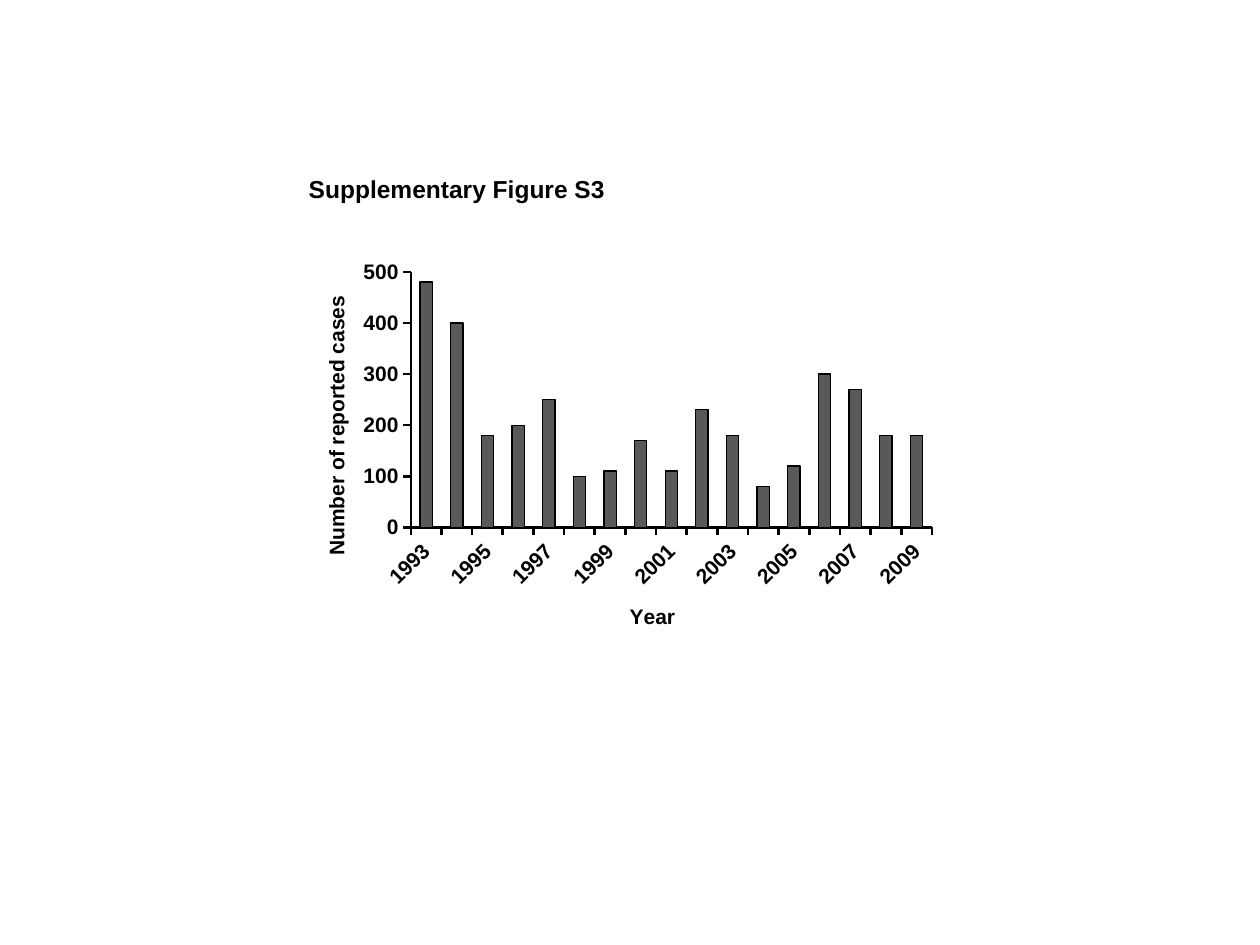
from lxml import etree
from pptx import Presentation
from pptx import util as u
from pptx.chart import data
from pptx.dml.color import RGBColor
from pptx.enum import chart as ch
from pptx.enum import text
from pptx.oxml.ns import qn

BLACK = RGBColor(0, 0, 0)
BAR_GRAY = RGBColor(0x59, 0x59, 0x59)
YEARS = range(1993, 2010)
CASES = (480, 400, 180, 200, 250, 100, 110, 170, 110,
         230, 180, 80, 120, 300, 270, 180, 180)


def style_font(font, size):
    """Apply the bold black Arial used throughout the slide."""
    font.name, font.size, font.bold = "Arial", u.Pt(size), True
    font.color.rgb = BLACK


def style_line(line, width):
    """Give a line a solid black stroke."""
    line.color.rgb = BLACK
    line.width = u.Pt(width)


def set_layout(parent, index, **settings):
    """Place a chart part at fractions of the chart area."""
    for old in parent.findall(qn("c:layout")):
        parent.remove(old)
    layout = etree.Element(qn("c:layout"))
    manual = etree.SubElement(layout, qn("c:manualLayout"))
    for tag, value in settings.items():
        etree.SubElement(manual, qn(f"c:{tag}")).set("val", str(value))
    parent.insert(index, layout)


def style_axis(axis, title, x, y):
    """Format an axis and place its title."""
    axis.has_major_gridlines = False
    axis.major_tick_mark = ch.XL_TICK_MARK.OUTSIDE
    axis.minor_tick_mark = ch.XL_TICK_MARK.NONE
    style_line(axis.format.line, 1.5)
    style_font(axis.tick_labels.font, 12)
    caption = axis.axis_title.text_frame
    caption.text = title
    style_font(caption.paragraphs[0].font, 12)
    set_layout(axis.axis_title._element, 1, xMode="edge", yMode="edge", x=x, y=y)


def slant_alternate_years(axis):
    """Label every second year at 45 degrees, with a tick for each year."""
    element = axis._element
    element.find(qn("c:txPr")).find(qn("a:bodyPr")).set("rot", "-2700000")
    last = element.find(qn("c:noMultiLvlLbl"))
    for tag, step in (("tickLblSkip", "2"), ("tickMarkSkip", "1")):
        skip = etree.Element(qn(f"c:{tag}"))
        skip.set("val", step)
        last.addprevious(skip)


def add_heading(slide):
    """Fill and place the figure heading."""
    heading = slide.shapes.title
    heading.left, heading.top = u.Cm(5.97), u.Cm(3.38)
    heading.width, heading.height = u.Cm(6.5), u.Cm(0.86)
    frame = heading.text_frame
    frame.text = "Supplementary Figure S3"
    frame.word_wrap = False
    frame.auto_size = text.MSO_AUTO_SIZE.SHAPE_TO_FIT_TEXT
    frame.vertical_anchor = text.MSO_ANCHOR.TOP
    frame.paragraphs[0].alignment = text.PP_ALIGN.LEFT
    style_font(frame.paragraphs[0].font, 14)


def add_cases_chart(slide):
    """Add the column chart of reported cases by year."""
    cases = data.CategoryChartData()
    cases.categories = [str(year) for year in YEARS]
    cases.add_series("Series 1", CASES)
    chart = slide.shapes.add_chart(
        ch.XL_CHART_TYPE.COLUMN_CLUSTERED,
        u.Cm(5.92), u.Cm(5.08), u.Cm(13.13), u.Cm(8.05), cases).chart
    chart.has_legend = chart.has_title = False
    style_font(chart.font, 12)
    plot = chart.plots[0]
    plot.gap_width, plot.vary_by_categories = 150, False
    bars = plot.series[0].format
    bars.fill.solid()
    bars.fill.fore_color.rgb = BAR_GRAY
    style_line(bars.line, 0.75)
    style_axis(chart.category_axis, "Year", 0.51, 0.87)
    slant_alternate_years(chart.category_axis)
    counts = chart.value_axis
    style_axis(counts, "Number of reported cases", 0.04, 0.1)
    counts.minimum_scale, counts.maximum_scale, counts.major_unit = 0, 500, 100
    set_layout(chart._chartSpace.chart.plotArea, 0, layoutTarget="inner",
               xMode="edge", yMode="edge", x=0.18, y=0.05, w=0.8, h=0.64)


def main():
    """Build and save the slide."""
    deck = Presentation()
    deck.slide_width, deck.slide_height = u.Cm(25.4), u.Cm(19.05)
    slide = deck.slides.add_slide(deck.slide_layouts[5])
    add_cases_chart(slide)
    add_heading(slide)
    deck.save("out.pptx")


if __name__ == "__main__":
    main()
